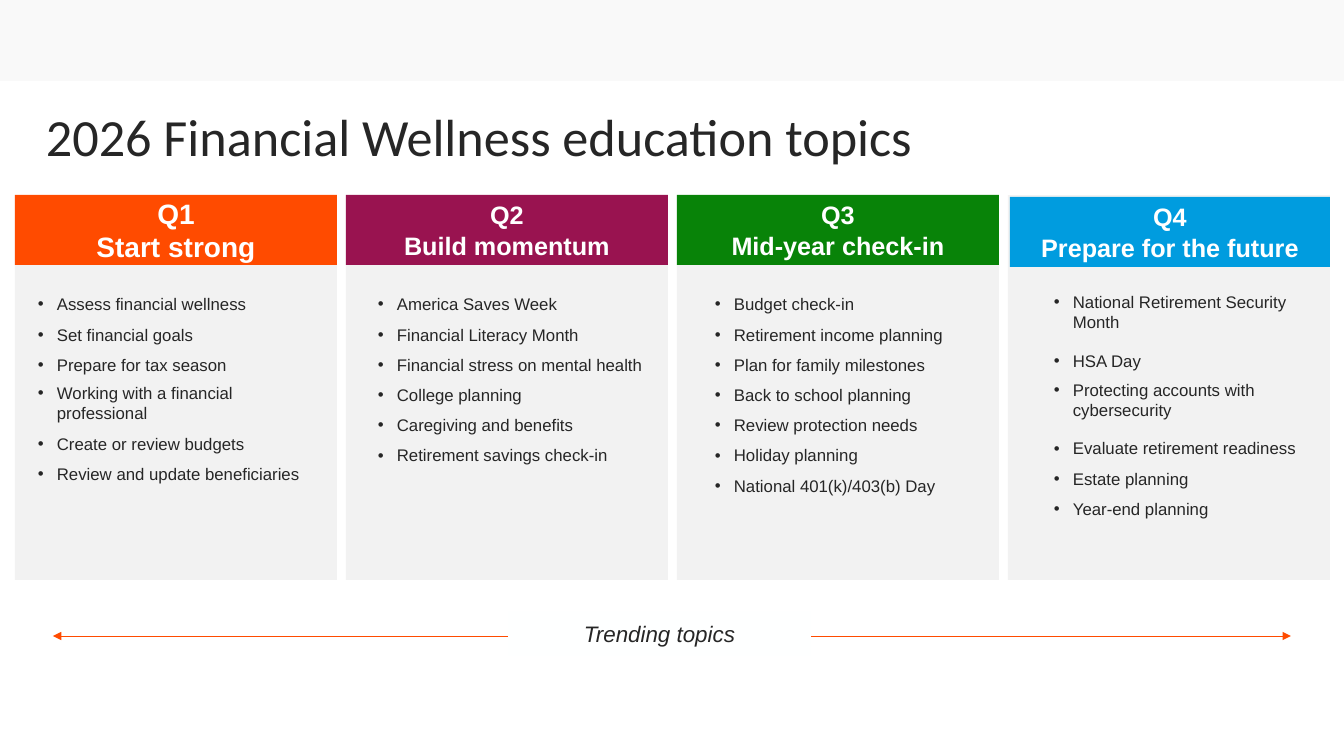
from lxml import etree
from pptx import Presentation
from pptx import util as u
from pptx.dml.color import RGBColor
from pptx.enum import shapes, text
from pptx.oxml.ns import qn

PX = 12192000 / 1344
INK = "262626"
ORANGE = "FF4B00"

deck = Presentation()
deck.slide_width, deck.slide_height = round(1344 * PX), round(756 * PX)
slide = deck.slides.add_slide(deck.slide_layouts[6])


def color(value):
    return RGBColor.from_string(value)


def add_text(lines, x, y, w, h, fill=None, size=12, font="Arial", ink=INK,
             bold=False, italic=False, align=text.PP_ALIGN.LEFT,
             anchor=text.MSO_ANCHOR.TOP, spacing=None, bullet=False, tight={}):
    """Place lines in a box; tight maps a line to its space before and after."""
    box = [round(n * PX) for n in (x, y, w, h)]
    if fill:
        block = slide.shapes.add_shape(shapes.MSO_SHAPE.RECTANGLE, *box)
        block.shadow.inherit = False
        block.fill.solid()
        block.fill.fore_color.rgb = color(fill)
        block.line.fill.background()
    else:
        block = slide.shapes.add_textbox(*box)
    frame = block.text_frame
    frame.word_wrap = True
    frame.vertical_anchor = anchor
    if bullet:
        frame.auto_size = text.MSO_AUTO_SIZE.SHAPE_TO_FIT_TEXT
    for n, line in enumerate(lines):
        para = frame.paragraphs[0] if n == 0 else frame.add_paragraph()
        para.alignment = align
        if line in tight:
            before, after = tight[line]
            para.space_before, para.space_after = u.Pt(before), u.Pt(after)
        elif spacing:
            para.line_spacing = spacing
        if bullet:
            props = para._p.get_or_add_pPr()
            props.set("marL", str(round(19 * PX)))
            props.set("indent", str(round(-19 * PX)))
            etree.SubElement(props, qn("a:buFont")).set("typeface", "Arial")
            etree.SubElement(props, qn("a:buChar")).set("char", "•")
        run = para.add_run()
        run.text = line
        run.font.name, run.font.size = font, u.Pt(size)
        run.font.bold, run.font.italic = bold, italic
        run.font.color.rgb = color(ink)


# Top band and title
add_text([], 0, 0, 1344, 81, fill="F9F9F9")
add_text(["2026 Financial Wellness education topics"], 36, 105, 1072, 70,
         size=37.3, font="Calibri", spacing=0.9, anchor=text.MSO_ANCHOR.MIDDLE)

# Quarters: name, theme, colour, header (x, y, w, size), topics (x, y, h), topics
quarters = [
    ("Q1", "Start strong", ORANGE, (15, 195, 322, 20), (28, 279, 209),
     ["Assess financial wellness", "Set financial goals",
      "Prepare for tax season", "Working with a financial professional",
      "Create or review budgets", "Review and update beneficiaries"]),
    ("Q2", "Build momentum", "991350", (346, 195, 322, 18), (368, 279, 190),
     ["America Saves Week", "Financial Literacy Month",
      "Financial stress on mental health", "College planning",
      "Caregiving and benefits", "Retirement savings check-in"]),
    ("Q3", "Mid-year check-in", "088308", (677, 195, 322, 18), (705, 279, 220),
     ["Budget check-in", "Retirement income planning",
      "Plan for family milestones", "Back to school planning",
      "Review protection needs", "Holiday planning",
      "National 401(k)/403(b) Day"]),
    ("Q4", "Prepare for the future", "009CDF", (1010, 197, 320, 18), (1044, 287, 236),
     ["National Retirement Security Month", "HSA Day",
      "Protecting accounts with cybersecurity",
      "Evaluate retirement readiness", "Estate planning",
      "Year-end planning"]),
]
two_line_topics = {
    "Working with a financial professional": (6, 0),
    "National Retirement Security Month": (0, 6),
    "Protecting accounts with cybersecurity": (6, 6),
}
for column, (quarter, theme, tint, header, body, topics) in enumerate(quarters):
    add_text([], 15 + 331 * column, 195, 322, 385, fill="F2F2F2")
    head_x, head_y, head_w, head_size = header
    add_text([quarter, theme], head_x, head_y, head_w, 70, fill=tint,
             size=head_size, ink="FFFFFF", bold=True,
             align=text.PP_ALIGN.CENTER, anchor=text.MSO_ANCHOR.MIDDLE)
    body_x, body_y, body_h = body
    add_text(topics, body_x, body_y, 285, body_h, spacing=1.5, bullet=True,
             tight=two_line_topics)

# Trending arrow, with its label covering the middle
arrow = slide.shapes.add_connector(
    shapes.MSO_CONNECTOR.STRAIGHT, *[round(n * PX) for n in (53, 636, 1291, 636)])
arrow.line.color.rgb = color(ORANGE)
arrow.line.width = u.Pt(0.5)
stroke = arrow.line._get_or_add_ln()
for end in ("a:headEnd", "a:tailEnd"):
    etree.SubElement(stroke, qn(end)).set("type", "triangle")
etree.SubElement(arrow._element.spPr, qn("a:effectLst"))
add_text(["Trending topics"], 508, 612, 303, 44, fill="FEFFFF", size=16,
         italic=True, align=text.PP_ALIGN.CENTER, anchor=text.MSO_ANCHOR.MIDDLE)

deck.save("out.pptx")
